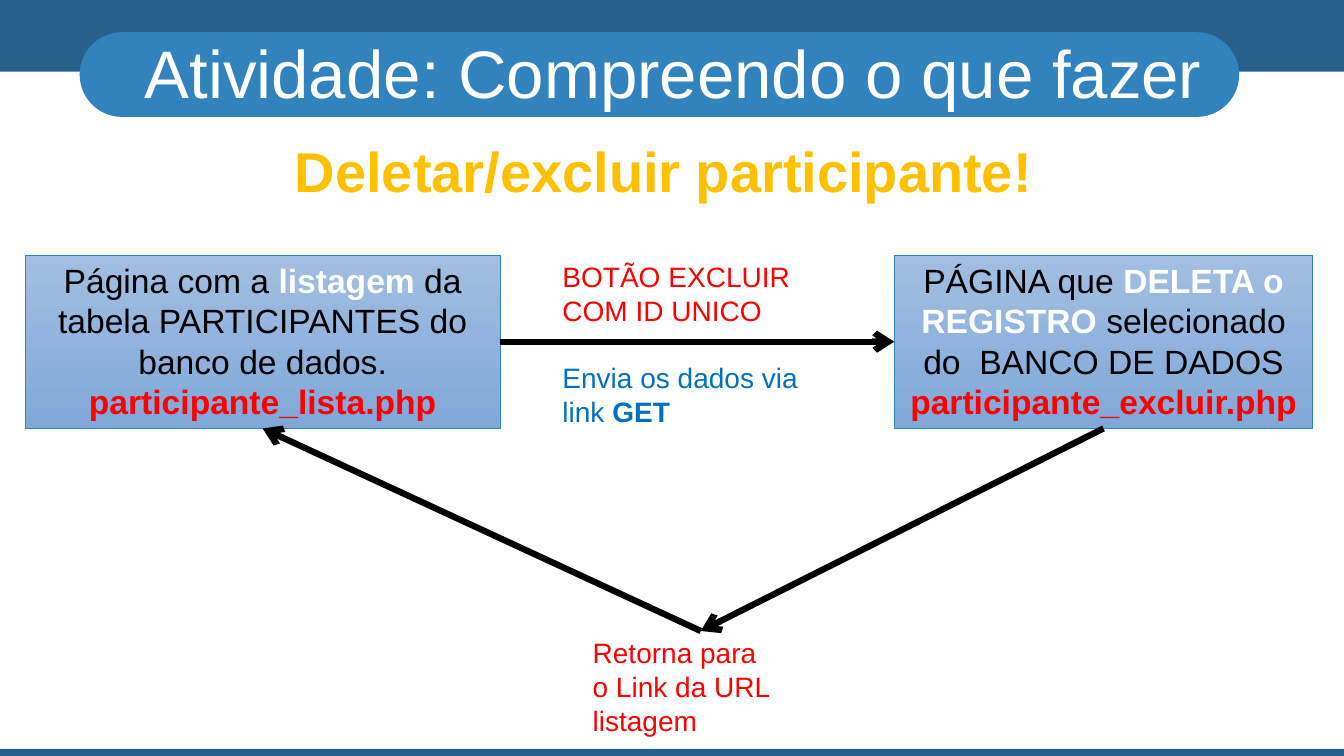
from dataclasses import dataclass

from lxml import etree
from pptx import Presentation
from pptx.dml.color import RGBColor
from pptx.enum import shapes, text
from pptx.oxml import ns
from pptx.util import Inches, Pt

HUES = {
    "navy": "28608C", "blue": "3282BE", "link": "0070C0",
    "light": "A2BEE1", "mid": "80A8D9", "gold": "FFC000",
    "red": "FF0000", "black": "000000", "white": "FFFFFF",
}
WIDE, HIGH = 13.33, 7.5
MID = text.MSO_ANCHOR.MIDDLE
TOP = text.MSO_ANCHOR.TOP


@dataclass
class Span:
    words: str
    hue: str
    bold: bool = False


@dataclass
class Para:
    spans: list[Span]
    gap: float = 0
    lead: float = 1.0


@dataclass
class Box:
    left: float
    top: float
    width: float
    height: float


@dataclass
class Note:
    box: Box
    paras: list[Para]
    size: int
    center: bool = False
    anchor: text.MSO_ANCHOR = TOP


@dataclass
class Arrow:
    start: tuple[float, float]
    end: tuple[float, float]


def color(name: str) -> RGBColor:
    return RGBColor.from_string(HUES[name])


def place(box: Box) -> list[int]:
    return [Inches(n) for n in (box.left, box.top, box.width, box.height)]


def write(frame, note: Note) -> None:
    frame.word_wrap = True
    frame.vertical_anchor = note.anchor
    for i, para in enumerate(note.paras):
        line = frame.add_paragraph() if i else frame.paragraphs[0]
        line.alignment = text.PP_ALIGN.CENTER if note.center else text.PP_ALIGN.LEFT
        line.space_before = Pt(para.gap)
        line.line_spacing = para.lead
        for span in para.spans:
            run = line.add_run()
            run.text = span.words
            run.font.name = "Arial"
            run.font.size = Pt(note.size)
            run.font.bold = span.bold
            run.font.color.rgb = color(span.hue)


def add_band(slide, kind: shapes.MSO_SHAPE, box: Box, hue: str):
    band = slide.shapes.add_shape(kind, *place(box))
    band.shadow.inherit = False
    band.fill.solid()
    band.fill.fore_color.rgb = color(hue)
    band.line.fill.background()
    return band


def add_page(slide, note: Note) -> None:
    """Draw a web page as a gradient box with its text."""
    page = slide.shapes.add_shape(shapes.MSO_SHAPE.RECTANGLE, *place(note.box))
    page.shadow.inherit = False
    page.fill.gradient()
    page.fill.gradient_angle = 270
    for stop, hue in zip(page.fill.gradient_stops, ("light", "mid")):
        stop.color.rgb = color(hue)
    page.line.color.rgb = color("blue")
    page.line.width = Pt(0.5)
    write(page.text_frame, note)


def add_note(slide, note: Note) -> None:
    write(slide.shapes.add_textbox(*place(note.box)).text_frame, note)


def add_arrow(slide, arrow: Arrow) -> None:
    ends = [Inches(n) for n in arrow.start + arrow.end]
    link = slide.shapes.add_connector(shapes.MSO_CONNECTOR.STRAIGHT, *ends)
    link.line.color.rgb = color("black")
    link.line.width = Pt(4.5)
    props = link.line._get_or_add_ln()
    etree.SubElement(props, ns.qn("a:tailEnd"), type="arrow")
    etree.SubElement(link._element.spPr, ns.qn("a:effectLst"))


BANDS = [
    (shapes.MSO_SHAPE.RECTANGLE, Box(0, 0, WIDE, 0.71), "navy"),
    (shapes.MSO_SHAPE.ROUNDED_RECTANGLE, Box(0.79, 0.32, 11.5, 0.84), "blue"),
    (shapes.MSO_SHAPE.RECTANGLE, Box(0, 7.43, WIDE, 0.07), "navy"),
]

LIST = Box(0.25, 2.53, 4.71, 1.72)
DROP = Box(8.87, 2.53, 4.15, 1.72)
PAGES = [
    Note(LIST, [
        Para([Span("Página com a ", "black"),
              Span("listagem ", "white", True),
              Span("da tabela PARTICIPANTES do banco de dados.", "black")]),
        Para([Span("participante_lista.php", "red", True)]),
    ], 24, center=True),
    Note(DROP, [
        Para([Span("PÁGINA que ", "black"),
              Span("DELETA o REGISTRO ", "white", True),
              Span("selecionado do  BANCO DE DADOS", "black")]),
        Para([Span("participante_excluir.php", "red", True)]),
    ], 24, center=True),
]

NOTES = [
    Note(Box(0.35, 0.37, 12.66, 0.79),
         [Para([Span("Atividade: Compreendo o que fazer", "white")], 10, 0.9)],
         48, True, MID),
    Note(Box(0.25, 1.33, 12.66, 0.79),
         [Para([Span("Deletar/excluir participante!", "gold", True)], 10, 0.9)],
         40, True, MID),
    Note(Box(5.48, 2.53, 2.76, 1.78), [
        Para([Span("BOTÃO EXCLUIR", "red")]),
        Para([Span("COM ID UNICO", "red")]),
        Para([Span("Envia os dados via link ", "link"),
              Span("GET", "link", True)], gap=24),
    ], 20),
    Note(Box(5.78, 6.26, 2, 1.11),
         [Para([Span("Retorna para o Link da URL listagem", "red")])], 20),
]

SIDE = LIST.top + LIST.height / 2
BASE = LIST.top + LIST.height
TURN = (6.95, 6.26)
ARROWS = [
    Arrow((LIST.left + LIST.width, SIDE), (DROP.left, SIDE)),
    Arrow((DROP.left + DROP.width / 2, BASE), TURN),
    Arrow(TURN, (LIST.left + LIST.width / 2, BASE)),
]


def main() -> None:
    deck = Presentation()
    deck.slide_width, deck.slide_height = Inches(WIDE), Inches(HIGH)
    slide = deck.slides.add_slide(deck.slide_layouts[6])
    for kind, box, hue in BANDS:
        band = add_band(slide, kind, box, hue)
        if kind == shapes.MSO_SHAPE.ROUNDED_RECTANGLE:
            band.adjustments[0] = 0.5
    for page in PAGES:
        add_page(slide, page)
    for note in NOTES:
        add_note(slide, note)
    for arrow in ARROWS:
        add_arrow(slide, arrow)
    deck.save("out.pptx")


if __name__ == "__main__":
    main()
